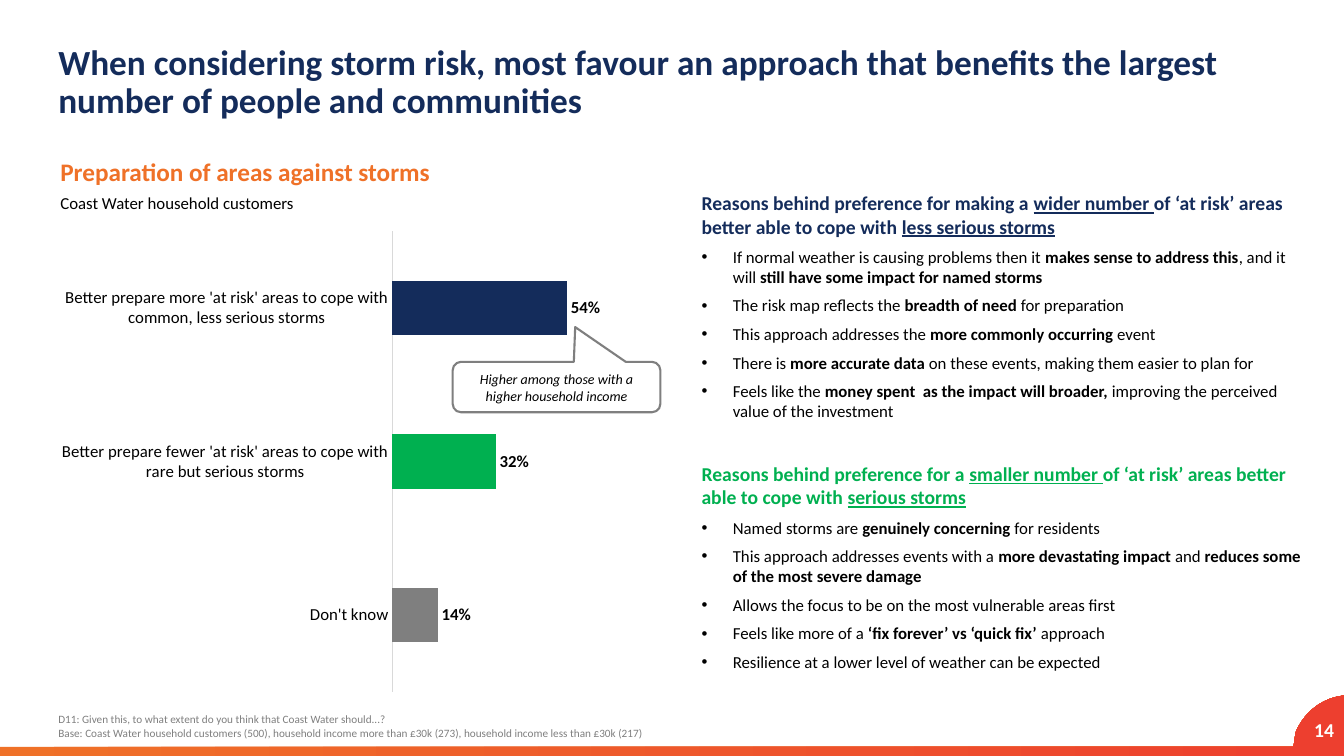
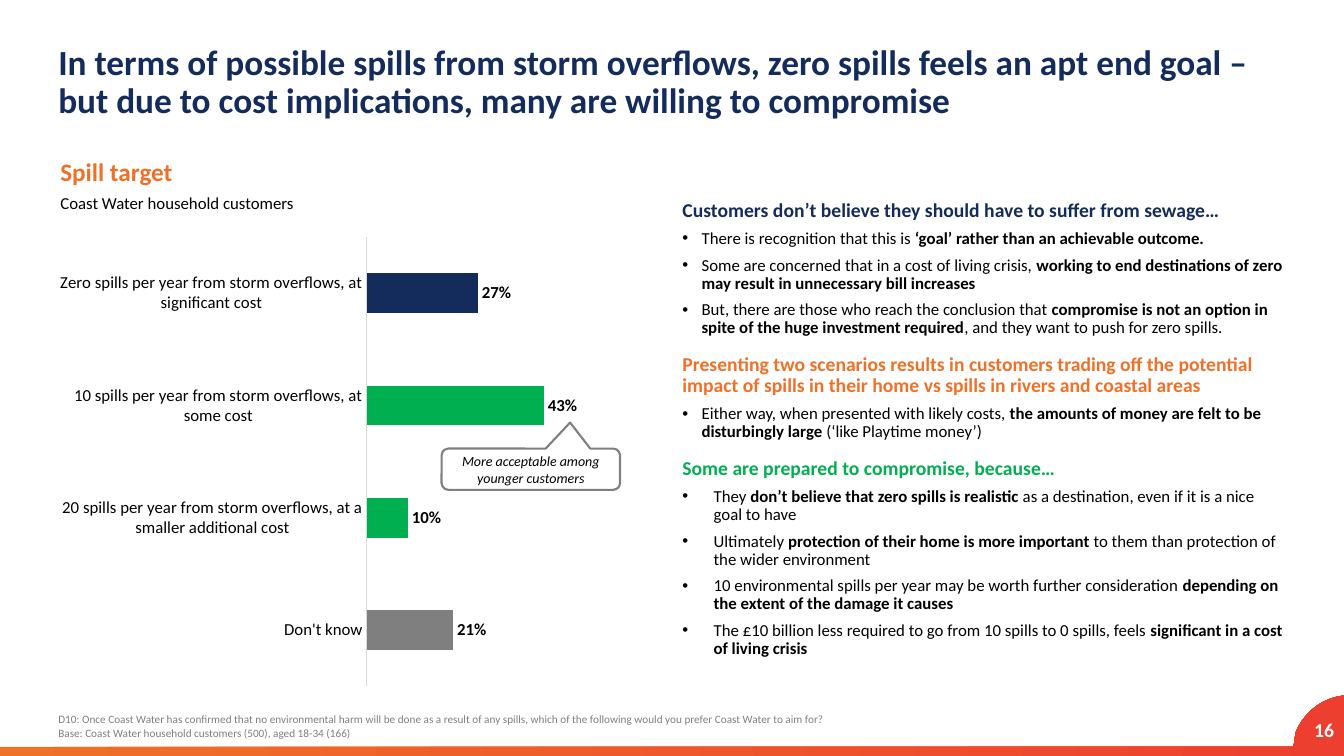
"""Build two survey slides, each with a bar chart and grouped reasons."""
from lxml import etree
from pptx import Presentation
from pptx.chart.data import CategoryChartData
from pptx.dml.color import RGBColor
from pptx.enum import chart as ch, shapes, text
from pptx.oxml import parse_xml
from pptx.oxml.ns import nsdecls, qn
from pptx.util import Inches, Pt

FONT = "Calibri"
HUES = {"navy": "142C5B", "orange": "EF7128", "red": "ED3F2F", "green": "00B050",
        "grey": "7F7F7F", "rule": "D9D9D9", "black": "000000", "white": "FFFFFF"}
BAND = [(13.33, 6.9), (13.33, 7.5), (0, 7.5), (0, 7.41), (12.83, 7.41)]
CURVE = [(12.85, 7.27), (12.92, 7.09), (13.08, 6.95), (13.27, 6.91)]

SLIDES = [
    {
        "page": "14",
        "title": "When considering storm risk, most favour an approach that benefits "
                 "the largest number of people and communities",
        "wide": 12.62,
        "head": "Preparation of areas against storms",
        "sub": "Coast Water household customers",
        "notes": ["D11: Given this, to what extent do you think that Coast Water should...?",
                  "Base: Coast Water household customers (500), household income more than "
                  "£30k (273), household income less than £30k (217)"],
        "bars": [
            ("Better prepare more 'at risk' areas to cope with common, less serious storms",
             0.54, "navy"),
            ("Better prepare fewer 'at risk' areas to cope with rare but serious storms",
             0.32, "green"),
            ("Don't know", 0.14, "grey"),
        ],
        "chart": (0.5, 2.2, 5.75, 4.76),
        "plot": (0.59, 0.02, 0.39, 0.96),
        "call": ("Higher among those with a higher household income",
                 (4.49, 3.59, 2.06, 0.5), (0.09, -1.19)),
        "body": (6.86, 1.49, 6.25, 5.58),
        "lead": 1.0,
        "groups": [
            ("navy", 6, 0.31,
             "Reasons behind preference for making a *wider number *of ‘at risk’ areas "
             "better able to cope with *less serious storms*",
             ["If normal weather is causing problems then it *makes sense to address this*, "
              "and it will *still have some impact for named storms*",
              "The risk map reflects the *breadth of need *for preparation",
              "This approach addresses the *more commonly occurring *event",
              "There is *more accurate data *on these events, making them easier to plan for",
              "Feels like the *money spent  as the impact will broader, *improving the "
              "perceived value of the investment"]),
            ("green", 23, 0.31,
             "Reasons behind preference for a *smaller number *of ‘at risk’ areas better "
             "able to cope with *serious storms*",
             ["Named storms are *genuinely concerning *for residents",
              "This approach addresses events with a *more devastating impact *and "
              "*reduces some of the most severe damage*",
              "Allows the focus to be on the most vulnerable areas first",
              "Feels like more of a *‘fix forever’ vs ‘quick fix’ *approach",
              "Resilience at a lower level of weather can be expected"]),
        ],
    },
    {
        "page": "16",
        "title": "In terms of possible spills from storm overflows, zero spills feels an apt "
                 "end goal – but due to cost implications, many are willing to compromise",
        "wide": 12.36,
        "head": "Spill target",
        "sub": "Coast Water household customers",
        "notes": ["D10: Once Coast Water has confirmed that no environmental harm will be done "
                  "as a result of any spills, which of the following would you prefer "
                  "Coast Water to aim for?",
                  "Base: Coast Water household customers (500), aged 18-34 (166)"],
        "bars": [
            ("Zero spills per year from storm overflows, at significant cost", 0.27, "navy"),
            ("10 spills per year from storm overflows, at some cost", 0.43, "green"),
            ("20 spills per year from storm overflows, at a smaller additional cost",
             0.1, "green"),
            ("Don't know", 0.21, "grey"),
        ],
        "chart": (0.5, 2.2, 6.09, 4.76),
        "plot": (0.515, 0.032, 0.47, 0.936),
        "call": ("More acceptable among younger customers",
                 (4.38, 4.45, 1.77, 0.41), (0.22, -1.13)),
        "body": (6.67, 1.56, 6.17, 5.4),
        "lead": 0.9,
        "groups": [
            ("navy", 12, 0.19,
             "Customers don’t believe they should have to suffer from sewage…",
             ["There is recognition that this is *‘goal’ rather than an achievable outcome.*",
              "Some are concerned that in a cost of living crisis, *working to end "
              "destinations of zero may result in unnecessary bill increases*",
              "But, there are those who reach the conclusion that *compromise is not an "
              "option in spite of the huge investment required*, and they want to push "
              "for zero spills."]),
            ("orange", 6, 0.19,
             "Presenting two scenarios results in customers trading off the potential impact "
             "of spills in their home vs spills in rivers and coastal areas",
             ["Either way, when presented with likely costs, *the amounts of money are felt "
              "to be disturbingly large *(‘like Playtime money’)"]),
            ("green", 6, 0.31,
             "Some are prepared to compromise, because…",
             ["They *don’t believe that zero spills is realistic *as a destination, even if "
              "it is a nice goal to have",
              "Ultimately *protection of their home is more important *to them than "
              "protection of the wider environment",
              "10 environmental spills per year may be worth further consideration "
              "*depending on the extent of the damage it causes*",
              "The £10 billion less required to go from 10 spills to 0 spills, feels "
              "*significant in a cost of living crisis*"]),
        ],
    },
]


def rgb(hue):
    return RGBColor.from_string(HUES[hue])


def style(font, size, hue, bold=False, italic=False):
    font.name, font.size, font.bold, font.italic = FONT, Pt(size), bold, italic
    font.color.rgb = rgb(hue)


def add_box(slide, place, lines, size, hue, bold=False, lead=None, pad=0.05):
    frame = slide.shapes.add_textbox(*map(Inches, place)).text_frame
    frame.word_wrap = True
    frame.margin_top, frame.margin_bottom = Inches(pad), 0
    frame.text = "\n".join(lines)
    for para in frame.paragraphs:
        para.line_spacing = lead
        style(para.runs[0].font, size, hue, bold)
    return frame


def add_band(slide):
    arc = []
    for step in range(13):
        t = step / 12
        mix = ((1 - t) ** 3, 3 * t * (1 - t) ** 2, 3 * t * t * (1 - t), t ** 3)
        arc.append(tuple(sum(m * p[k] for m, p in zip(mix, CURVE)) for k in (0, 1)))
    dots = [(Inches(x), Inches(y)) for x, y in BAND + arc]
    pen = slide.shapes.build_freeform(*dots[0])
    pen.add_line_segments(dots[1:], close=True)
    band = pen.convert_to_shape()
    band.shadow.inherit = False
    band.line.fill.background()
    band.fill.gradient()
    band.fill.gradient_angle = 0
    for stop, hue in zip(band.fill.gradient_stops, ("orange", "red")):
        stop.color.rgb = rgb(hue)


def add_bars(slide, place, bars, plot):
    data = CategoryChartData(number_format="0%")
    data.categories = [name for name, _, _ in bars]
    data.add_series("Series 1", [val for _, val, _ in bars])
    kind = ch.XL_CHART_TYPE.BAR_CLUSTERED
    chart = slide.shapes.add_chart(kind, *map(Inches, place), data).chart
    chart.has_legend = chart.has_title = False
    style(chart.font, 10, "black")
    cat, val = chart.category_axis, chart.value_axis
    cat.reverse_order = True
    cat.major_tick_mark = ch.XL_TICK_MARK.NONE
    style(cat.tick_labels.font, 12, "black")
    cat.format.line.color.rgb = rgb("rule")
    cat.format.line.width = Pt(0.75)
    val.minimum_scale, val.maximum_scale = 0, 0.7
    val.has_major_gridlines = val.visible = False
    area = chart.plots[0]
    area.gap_width, area.vary_by_categories = 182, False
    area.has_data_labels = True
    tags = area.data_labels
    tags.show_value = True
    tags.number_format, tags.number_format_is_linked = "0%", False
    tags.position = ch.XL_LABEL_POSITION.OUTSIDE_END
    style(tags.font, 12, "black", True)
    for i, (_, _, hue) in enumerate(bars):
        fill = area.series[0].points[i].format.fill
        fill.solid()
        fill.fore_color.rgb = rgb(hue)
    root = chart.element.find(".//" + qn("c:plotArea"))
    for old in root.findall(qn("c:layout")):
        root.remove(old)
    rows = [("layoutTarget", "inner"), ("xMode", "edge"), ("yMode", "edge")]
    rows += list(zip("xywh", plot))
    tags = "".join(f'<c:{tag} val="{num}"/>' for tag, num in rows)
    root.insert(0, parse_xml(f'<c:layout {nsdecls("c")}><c:manualLayout>{tags}'
                             '</c:manualLayout></c:layout>'))


def add_call(slide, words, place, tip):
    kind = shapes.MSO_SHAPE.ROUNDED_RECTANGULAR_CALLOUT
    call = slide.shapes.add_shape(kind, *map(Inches, place))
    call.shadow.inherit = False
    call.adjustments[0], call.adjustments[1] = tip
    call.fill.background()
    call.line.color.rgb = rgb("grey")
    call.line.width = Pt(1.5)
    frame = call.text_frame
    frame.word_wrap = True
    frame.vertical_anchor = text.MSO_ANCHOR.MIDDLE
    frame.text = words
    para = frame.paragraphs[0]
    para.alignment = text.PP_ALIGN.CENTER
    style(para.runs[0].font, 10, "black", italic=True)


def add_para(para, words, size, hue, lead, head=False):
    para.line_spacing, para.space_after = lead, Pt(6)
    for i, part in enumerate(words.split("*")):
        if part:
            run = para.add_run()
            run.text = part
            style(run.font, size, hue, head or i % 2 == 1)
            run.font.underline = head and i % 2 == 1


def add_dot(para, indent):
    prop = para._p.get_or_add_pPr()
    prop.set("marL", str(Inches(indent)))
    prop.set("indent", str(-Inches(indent)))
    etree.SubElement(prop, qn("a:buFont")).set("typeface", "Arial")
    etree.SubElement(prop, qn("a:buChar")).set("char", "•")


def add_body(slide, place, groups, lead):
    frame = slide.shapes.add_textbox(*map(Inches, place)).text_frame
    frame.word_wrap = True
    frame.vertical_anchor = text.MSO_ANCHOR.MIDDLE
    for i, (hue, gap, indent, head, points) in enumerate(groups):
        para = frame.add_paragraph() if i else frame.paragraphs[0]
        para.space_before = Pt(gap)
        add_para(para, head, 14, hue, lead, True)
        for point in points:
            para = frame.add_paragraph()
            add_para(para, point, 12, "black", lead)
            add_dot(para, indent)


def add_slide(deck, item):
    slide = deck.slides.add_slide(deck.slide_layouts[6])
    add_band(slide)
    page = add_box(slide, (12.39, 7.04, 0.94, 0.4), [item["page"]], 14, "white", True, pad=0)
    page.vertical_anchor = text.MSO_ANCHOR.MIDDLE
    page.paragraphs[0].alignment = text.PP_ALIGN.RIGHT
    add_box(slide, (0.48, 0.4, item["wide"], 0.6), [item["title"]], 25.2, "navy", True, 0.9)
    add_box(slide, (0.48, 7.02, 11.9, 0.36), item["notes"], 8, "grey")
    add_box(slide, (0.5, 1.44, 6.09, 0.38), [item["head"]], 18, "orange", True, 1.2)
    add_box(slide, (0.5, 1.82, 6.09, 0.32), [item["sub"]], 12, "black", lead=1.2)
    add_bars(slide, item["chart"], item["bars"], item["plot"])
    add_body(slide, item["body"], item["groups"], item["lead"])
    add_call(slide, *item["call"])


def main():
    deck = Presentation()
    deck.slide_width, deck.slide_height = Inches(13.33), Inches(7.5)
    for item in SLIDES:
        add_slide(deck, item)
    deck.save("out.pptx")


if __name__ == "__main__":
    main()
